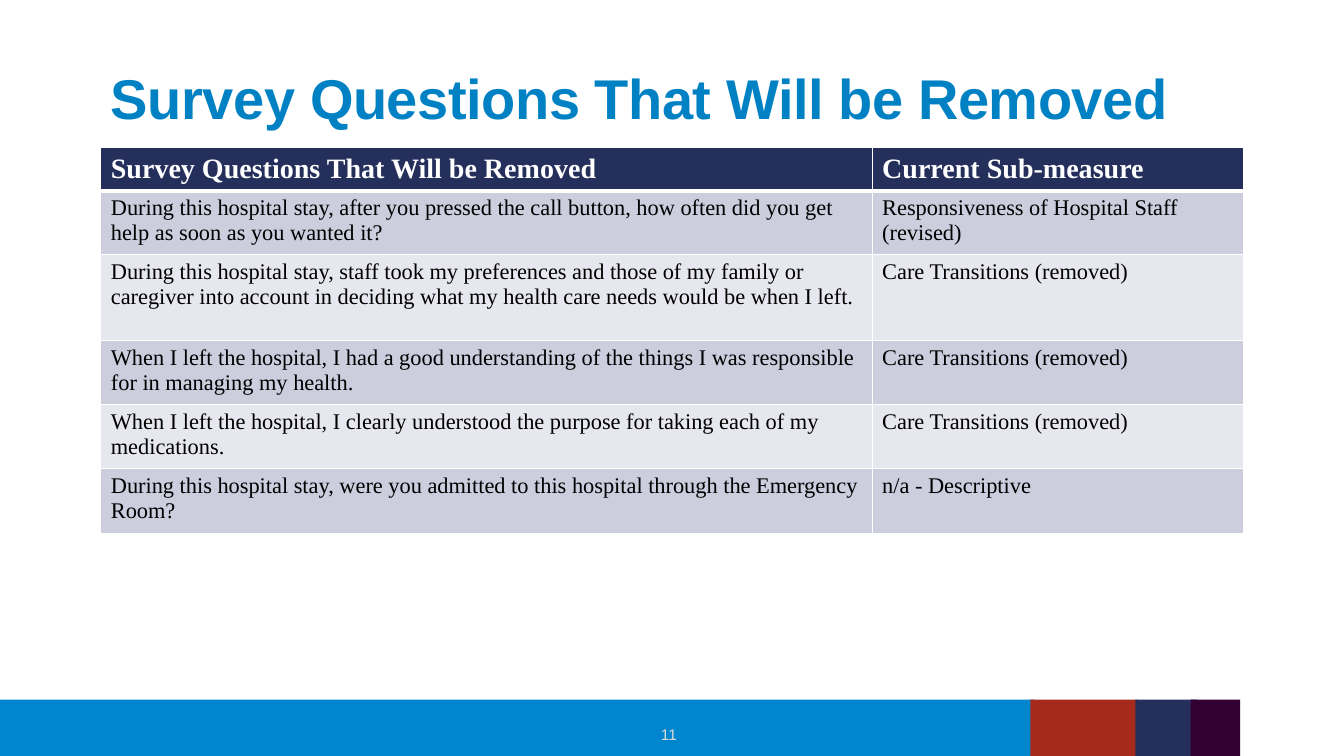
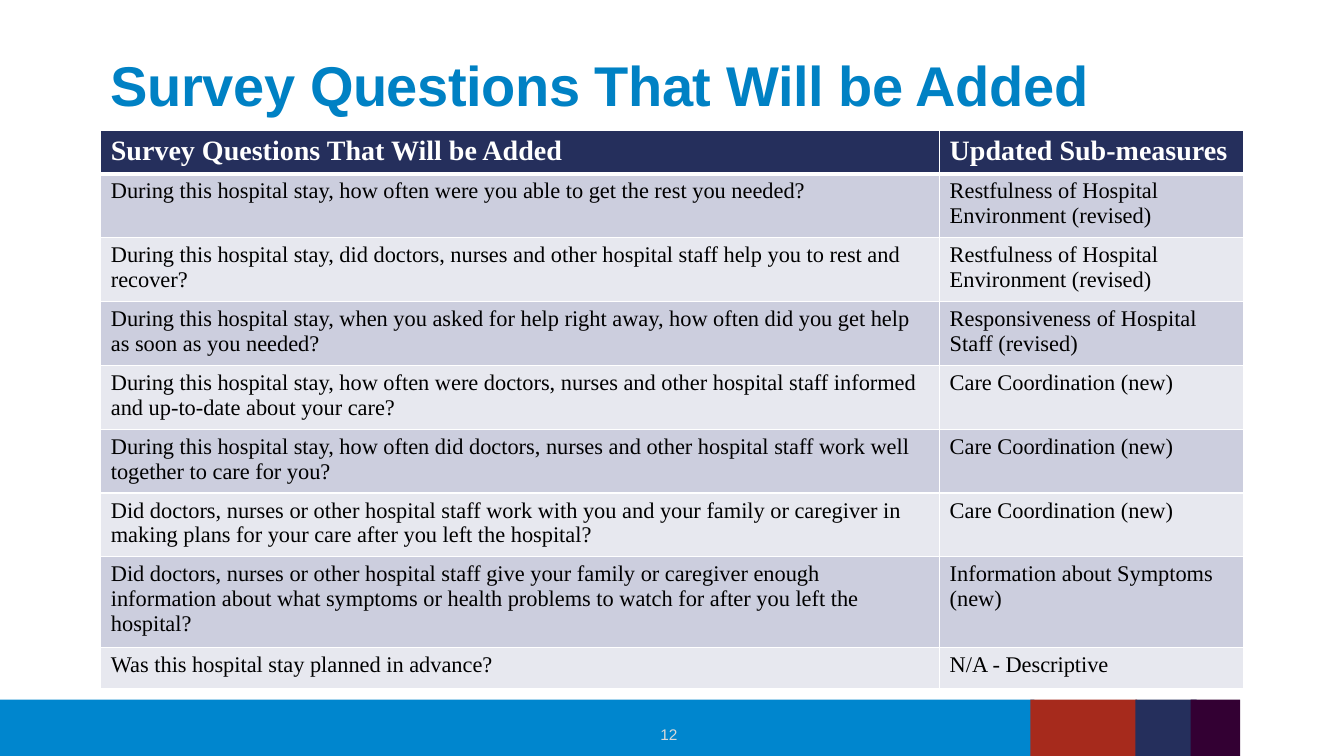
from dataclasses import dataclass

from lxml import etree
from pptx import Presentation
from pptx import util as u
from pptx.dml.color import RGBColor
from pptx.enum import shapes, text
from pptx.oxml import ns


@dataclass(frozen=True)
class Theme:
    title: str = "0081C4"
    blue: str = "0086CE"
    red: str = "A62A1C"
    navy: str = "252F5C"
    plum: str = "330033"
    white: str = "FFFFFF"
    black: str = "000000"
    number: str = "D9D9D9"
    bands: tuple = ("CCCEDE", "E7E8EF")
    sans: str = "Arial"
    serif: str = "Times New Roman"
    title_size: int = 40
    header_size: int = 20
    body_size: int = 16
    number_size: int = 11


class Deck:
    left, width = 1, 11.33
    footer_top, footer_height = 6.94, 0.56

    def __init__(self, theme):
        self.theme = theme
        self.prs = Presentation()
        self.prs.slide_width = u.Inches(13.33)
        self.prs.slide_height = u.Inches(7.5)
        self.s = None

    def add_slide(self, title, top, number):
        self.s = self.prs.slides.add_slide(self.prs.slide_layouts[5])
        self.fill(self.s.background, self.theme.white)
        self.title(title, top)
        self.footer(number)

    def fill(self, target, color):
        target.fill.solid()
        target.fill.fore_color.rgb = RGBColor.from_string(color)

    def format(self, p, name, size, color, bold=False):
        for r in p.runs:
            r.font.name = name
            r.font.size = u.Pt(size)
            r.font.bold = bold
            r.font.color.rgb = RGBColor.from_string(color)

    def title(self, words, top):
        t = self.theme
        sp = self.s.shapes.title
        sp.left, sp.top = u.Inches(self.left), u.Inches(top)
        sp.width, sp.height = u.Inches(self.width), u.Inches(1.25)
        self.fill(sp, t.white)
        tf = sp.text_frame
        tf.text = words
        tf.auto_size = text.MSO_AUTO_SIZE.NONE
        tf.vertical_anchor = text.MSO_ANCHOR.MIDDLE
        p = tf.paragraphs[0]
        p.alignment = text.PP_ALIGN.LEFT
        self.format(p, t.sans, t.title_size, t.title, True)
        p.runs[0].font._element.set("spc", "-30")

    def footer(self, number):
        t = self.theme
        bands = ((0, 10.26, t.blue), (10.22, 1.06, t.red),
                 (11.26, 0.61, t.navy), (11.81, 0.49, t.plum))
        for left, width, color in bands:
            sp = self.s.shapes.add_shape(
                shapes.MSO_SHAPE.RECTANGLE, u.Inches(left), u.Inches(self.footer_top),
                u.Inches(width), u.Inches(self.footer_height))
            sp.shadow.inherit = False
            sp.line.fill.background()
            self.fill(sp, color)
        sp = self.s.shapes.add_textbox(
            u.Inches(4.41), u.Inches(7.12), u.Inches(4.45), u.Inches(0.33))
        tf = sp.text_frame
        tf.word_wrap = True
        tf.vertical_anchor = text.MSO_ANCHOR.MIDDLE
        tf.text = str(number)
        p = tf.paragraphs[0]
        p.alignment = text.PP_ALIGN.CENTER
        self.format(p, t.sans, t.number_size, t.number)

    def borders(self, cell, top, bottom):
        tc_pr = cell._tc.get_or_add_tcPr()
        for side, points in (("L", 1), ("R", 1), ("T", top), ("B", bottom)):
            ln = etree.SubElement(tc_pr, ns.qn(f"a:ln{side}"), w=str(u.Pt(points)))
            solid = etree.SubElement(ln, ns.qn("a:solidFill"))
            etree.SubElement(solid, ns.qn("a:srgbClr"), val=self.theme.white)

    def table(self, top, first_width, heights, rows, header_anchor):
        t = self.theme
        table = self.s.shapes.add_table(
            len(rows), 2, u.Inches(self.left), u.Inches(top),
            u.Inches(self.width), u.Inches(sum(heights))).table
        table.horz_banding = False
        for column, width in zip(table.columns, (first_width, self.width - first_width)):
            column.width = u.Inches(width)
        for i, (height, values) in enumerate(zip(heights, rows)):
            table.rows[i].height = u.Inches(height)
            header = i == 0
            for cell, value in zip(table.rows[i].cells, values):
                cell.text = value
                cell.vertical_anchor = header_anchor if header else text.MSO_ANCHOR.TOP
                self.borders(cell, 3 if i == 1 else 1, 3 if header else 1)
                self.fill(cell, t.navy if header else t.bands[(i - 1) % 2])
                self.format(cell.text_frame.paragraphs[0], t.serif,
                            t.header_size if header else t.body_size,
                            t.white if header else t.black, header)


REMOVED = [
    ("Survey Questions That Will be Removed", "Current Sub-measure"),
    ("During this hospital stay, after you pressed the call button, how often did you "
     "get help as soon as you wanted it?", "Responsiveness of Hospital Staff (revised)"),
    ("During this hospital stay, staff took my preferences and those of my family or "
     "caregiver into account in deciding what my health care needs would be when I left.",
     "Care Transitions (removed)"),
    ("When I left the hospital, I had a good understanding of the things I was "
     "responsible for in managing my health.", "Care Transitions (removed)"),
    ("When I left the hospital, I clearly understood the purpose for taking each of my "
     "medications.", "Care Transitions (removed)"),
    ("During this hospital stay, were you admitted to this hospital through the "
     "Emergency Room?", "n/a - Descriptive"),
]

ADDED = [
    ("Survey Questions That Will be Added", "Updated Sub-measures"),
    ("During this hospital stay, how often were you able to get the rest you needed?",
     "Restfulness of Hospital Environment (revised)"),
    ("During this hospital stay, did doctors, nurses and other hospital staff help you "
     "to rest and recover?", "Restfulness of Hospital Environment (revised)"),
    ("During this hospital stay, when you asked for help right away, how often did you "
     "get help as soon as you needed?", "Responsiveness of Hospital Staff (revised)"),
    ("During this hospital stay, how often were doctors, nurses and other hospital staff "
     "informed and up-to-date about your care?", "Care Coordination (new)"),
    ("During this hospital stay, how often did doctors, nurses and other hospital staff "
     "work well together to care for you?", "Care Coordination (new)"),
    ("Did doctors, nurses or other hospital staff work with you and your family or "
     "caregiver in making plans for your care after you left the hospital?",
     "Care Coordination (new)"),
    ("Did doctors, nurses or other hospital staff give your family or caregiver enough "
     "information about what symptoms or health problems to watch for after you left the "
     "hospital?", "Information about Symptoms (new)"),
    ("Was this hospital stay planned in advance?", "N/A - Descriptive"),
]


def main():
    deck = Deck(Theme())
    deck.add_slide("Survey Questions That Will be Removed", 0.34, 11)
    deck.table(1.46, 7.65, [0.4, 0.6, 0.85, 0.6, 0.6, 0.65], REMOVED,
               text.MSO_ANCHOR.MIDDLE)
    deck.add_slide("Survey Questions That Will be Added", 0.21, 12)
    deck.table(1.29, 8.32, [0.4] + [0.59] * 6 + [0.84, 0.41], ADDED,
               text.MSO_ANCHOR.TOP)
    deck.prs.save("out.pptx")


if __name__ == "__main__":
    main()
